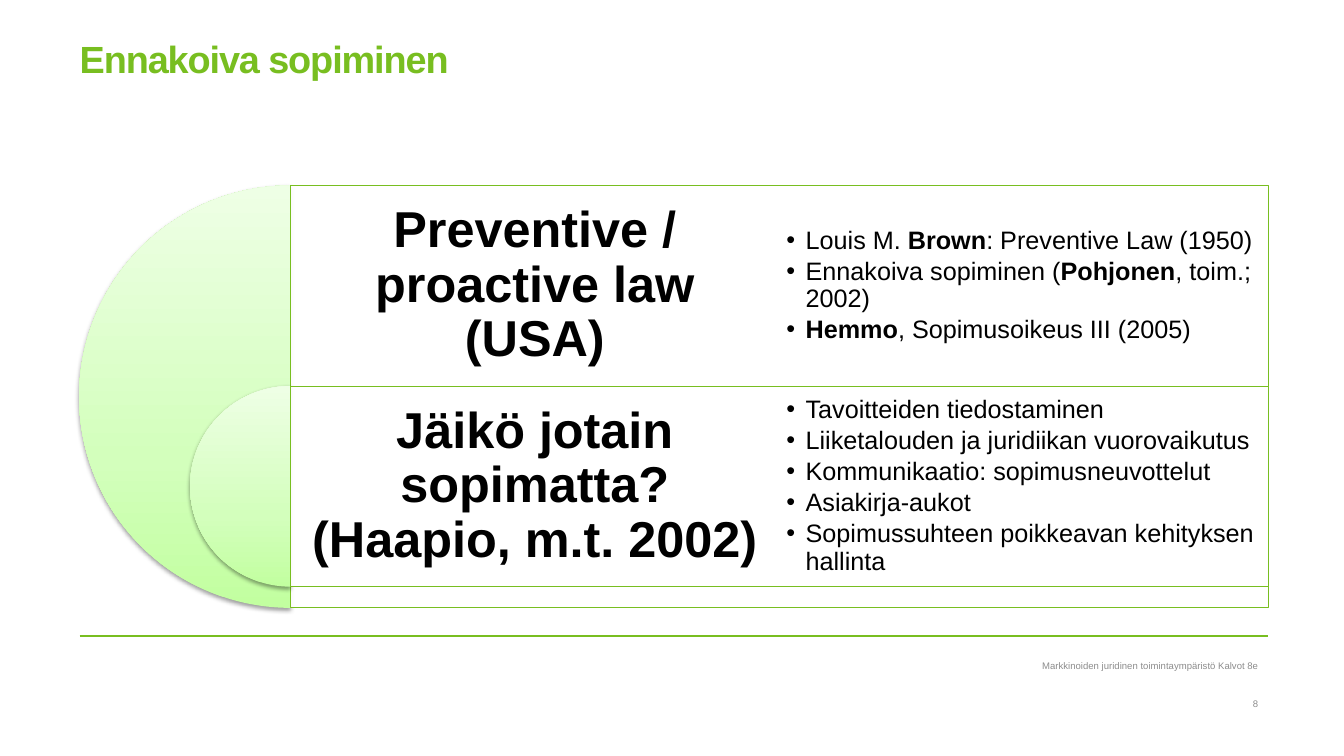
from copy import deepcopy

from pptx import Presentation
from pptx import util as u
from pptx.dml.color import RGBColor
from pptx.enum import shapes, text
from pptx.oxml import parse_xml
from pptx.oxml.ns import nsdecls, qn

GREEN = RGBColor(0x78, 0xBE, 0x20)
LIGHT = RGBColor(0xC2, 0xFF, 0xA0)
LIGHTER = RGBColor(0xD3, 0xFF, 0xBC)
LIGHTEST = RGBColor(0xEE, 0xFF, 0xE5)
WHITE = RGBColor(0xFF, 0xFF, 0xFF)
BLACK = RGBColor(0, 0, 0)
GRAY = RGBColor(0x8C, 0x8C, 0x8C)
ALIGN, ANCHOR = text.PP_ALIGN, text.MSO_ANCHOR

# Layout of the diagram: both rows share one left edge and two equal columns
LEFT, TOP, COL_W, ROW_H, FULL_H = 2.88, 1.84, 4.85, 1.99, 4.19
ROWS = [
    ("Preventive / proactive law (USA)", FULL_H,
     ["Louis M. *Brown*: Preventive Law (1950)",
      "Ennakoiva sopiminen (*Pohjonen*, toim.; 2002)",
      "*Hemmo*, Sopimusoikeus III (2005)"]),
    ("Jäikö jotain sopimatta? (Haapio, m.t. 2002)", ROW_H,
     ["Tavoitteiden tiedostaminen",
      "Liiketalouden ja juridiikan vuorovaikutus",
      "Kommunikaatio: sopimusneuvottelut",
      "Asiakirja-aukot",
      "Sopimussuhteen poikkeavan kehityksen hallinta"]),
]


def write(p, content, size=18, color=BLACK, bold=False, align=ALIGN.LEFT,
          line=1.0, after=0, spacing=None, bullet=False):
    """Fill one paragraph; parts between asterisks are bold."""
    if bullet:
        pPr = p._p.get_or_add_pPr()
        pPr.set("marL", str(u.Inches(0.19)))
        pPr.set("indent", str(-u.Inches(0.19)))
        pPr.append(parse_xml(f'<a:buChar {nsdecls("a")} char="•"/>'))
    p.alignment, p.line_spacing = align, line
    p.space_before, p.space_after = u.Pt(0), u.Pt(after)
    for i, part in enumerate(content.split("*")):
        if not part:
            continue
        r = p.add_run()
        r.text = part
        r.font.name, r.font.size = "Arial", u.Pt(size)
        r.font.bold = bold or i % 2 == 1
        r.font.color.rgb = color
        if spacing is not None:
            r._r.get_or_add_rPr().set("spc", str(spacing))


class Deck:
    def __init__(self, prs, layout):
        self.s = prs.slides.add_slide(prs.slide_layouts[layout])

    def frame(self, sp, box, inset, anchor):
        sp.left, sp.top, sp.width, sp.height = map(u.Inches, box)
        tf = sp.text_frame
        tf.word_wrap, tf.auto_size = True, text.MSO_AUTO_SIZE.NONE
        tf.vertical_anchor = anchor
        (tf.margin_left, tf.margin_top,
         tf.margin_right, tf.margin_bottom) = map(u.Inches, inset)
        return tf

    def title(self, content):
        tf = self.frame(self.s.shapes.title, (0.79, 0.42, 11.79, 1.31),
                        [0] * 4, ANCHOR.TOP)
        write(tf.paragraphs[0], content, size=27, color=GREEN, bold=True,
              line=0.85, spacing=-80)

    def label(self, content, box, inset, **style):
        sp = self.s.shapes.add_textbox(0, 0, 0, 0)
        tf = self.frame(sp, box, inset, ANCHOR.MIDDLE)
        write(tf.paragraphs[0], content, **style)

    def bullets(self, idx, items, box):
        sp = self.s.placeholders[idx]
        self.s.shapes._spTree.append(sp._element)  # bring in front of panels
        tf = self.frame(sp, box, [0.07] * 4, ANCHOR.MIDDLE)
        for i, item in enumerate(items):
            p = tf.add_paragraph() if i else tf.paragraphs[0]
            write(p, item, line=0.9, after=2.7, bullet=True)

    def shape(self, kind, *box):
        sp = self.s.shapes.add_shape(kind, *map(u.Inches, box))
        sp.shadow.inherit = False
        return sp

    def half_disc(self, center_x, top, size):
        sp = self.shape(shapes.MSO_SHAPE.PIE, center_x - size / 2, top, size, size)
        sp.adjustments[0], sp.adjustments[1] = 54, 162
        sp.line.fill.background()
        sp.fill.gradient()
        sp.fill.gradient_angle = 90
        gs = sp._element.spPr.find(qn("a:gradFill")).find(qn("a:gsLst"))
        gs.insert(1, deepcopy(gs[0]))
        for stop, position, color in zip(sp.fill.gradient_stops, (0, 0.35, 1),
                                         (LIGHT, LIGHTER, LIGHTEST)):
            stop.position, stop.color.rgb = position, color
        sp._element.spPr.find(qn("a:effectLst")).append(parse_xml(
            f'<a:outerShdw {nsdecls("a")} blurRad="{u.Pt(3.1)}" dist="{u.Pt(1.6)}" '
            'dir="5400000" rotWithShape="0"><a:srgbClr val="000000">'
            '<a:alpha val="38000"/></a:srgbClr></a:outerShdw>'))

    def panel(self, *box):
        sp = self.shape(shapes.MSO_SHAPE.RECTANGLE, *box)
        sp.fill.solid()
        sp.fill.fore_color.rgb = WHITE
        color = sp._element.spPr.find(qn("a:solidFill"))[0]
        color.append(parse_xml(f'<a:alpha {nsdecls("a")} val="90000"/>'))
        sp.line.color.rgb, sp.line.width = GREEN, u.Pt(0.75)

    def rule(self, x1, x2, y):
        c = self.s.shapes.add_connector(shapes.MSO_CONNECTOR.STRAIGHT,
                                        *map(u.Inches, (x1, y, x2, y)))
        c.line.color.rgb, c.line.width = GREEN, u.Pt(1)
        c._element.spPr.append(parse_xml(f'<a:effectLst {nsdecls("a")}/>'))


def main():
    prs = Presentation()
    prs.slide_width, prs.slide_height = u.Inches(13.33), u.Inches(7.5)
    deck = Deck(prs, 3)

    # Title and footer rule
    deck.rule(0.79, 12.58, 6.31)
    deck.title("Ennakoiva sopiminen")

    # Nested half discs with a heading and a list per row
    for i, (heading, size, items) in enumerate(ROWS):
        top = TOP + i * ROW_H
        deck.half_disc(LEFT, top, size)
        deck.panel(LEFT, top, 2 * COL_W, size)
        deck.label(heading, (LEFT, top, COL_W, ROW_H), [0.15] * 4, size=36,
                   bold=True, align=ALIGN.CENTER, line=0.9, after=12.6)
        deck.bullets(i + 1, items, (LEFT + COL_W, top, COL_W, ROW_H))

    # Footer and page number
    for content, top in (("Markkinoiden juridinen toimintaympäristö Kalvot 8e", 6.51),
                         ("8", 6.89)):
        deck.label(content, (7.2, top, 5.28, 0.18), (0.1, 0.05, 0, 0.05),
                   size=6.8, color=GRAY, align=ALIGN.RIGHT)

    prs.save("out.pptx")


if __name__ == "__main__":
    main()
